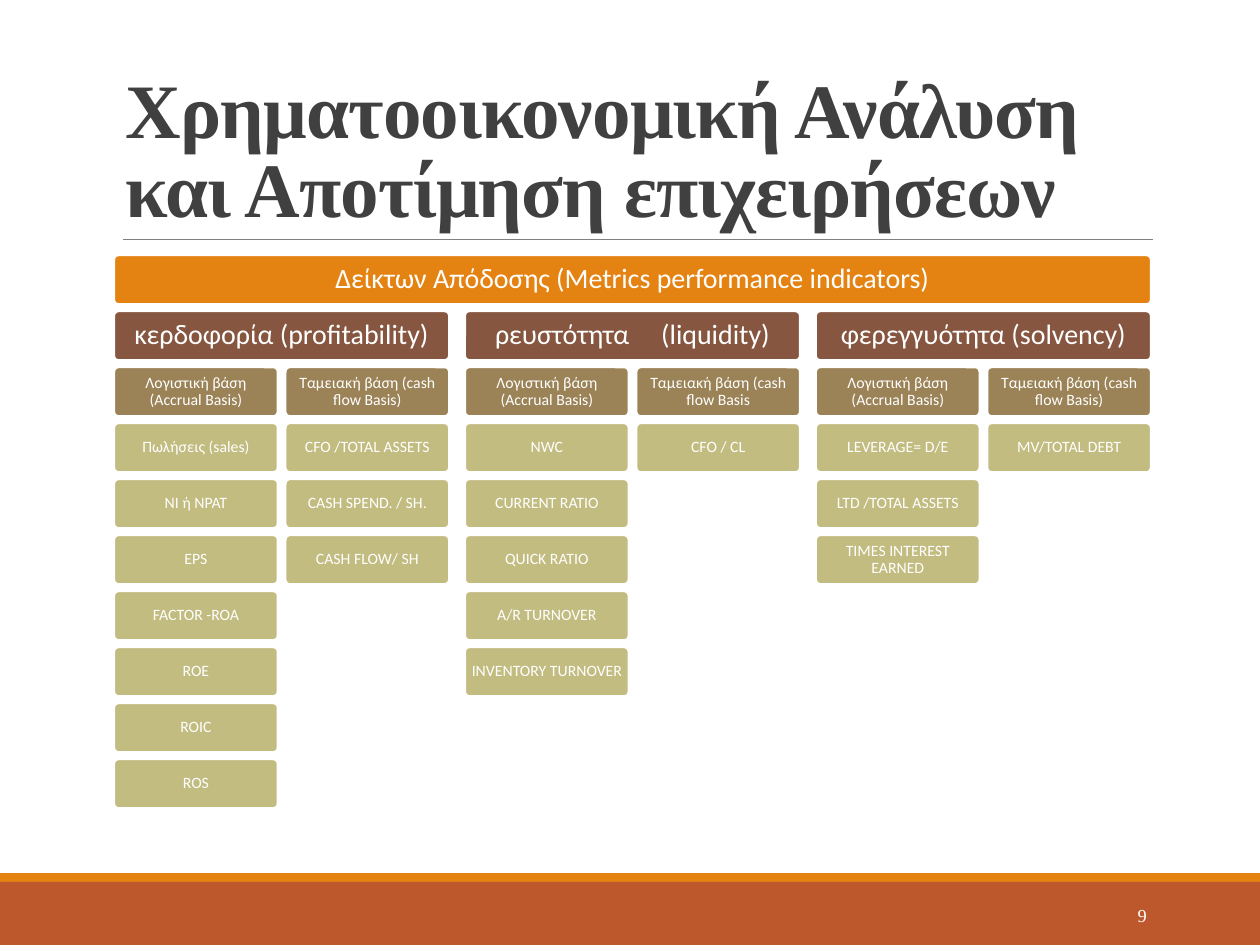
from lxml import etree
from pptx import Presentation
from pptx.dml.color import RGBColor
from pptx.enum.shapes import MSO_CONNECTOR, MSO_SHAPE
from pptx.enum.text import MSO_ANCHOR as Anchor, PP_ALIGN as Align
from pptx.oxml.ns import qn
from pptx.util import Inches, Pt

WHITE = RGBColor(0xFF, 0xFF, 0xFF)
DARK = RGBColor(0x40, 0x40, 0x40)
GRAY = RGBColor(0x80, 0x80, 0x80)
ORANGE = RGBColor(0xE4, 0x83, 0x12)
RUST = RGBColor(0xBD, 0x58, 0x2C)
BROWN = RGBColor(0x86, 0x56, 0x40)
TAN = RGBColor(0x9B, 0x83, 0x57)
SAND = RGBColor(0xC2, 0xBC, 0x80)

SERIF, SANS = "Times New Roman", "Calibri"

# Grid of the metrics tree, in inches
LEFT, TOP = 0.9, 2.02
TREE_W, CATEGORY_W, BASIS_W, BOX_H = 8.24, 2.67, 1.31, 0.4
CATEGORY_STEP = (TREE_W - CATEGORY_W) / 2
BASIS_STEP = CATEGORY_W - BASIS_W
ROW_STEP = 4 / 9

HEADLINE = "Δείκτων Απόδοσης (Metrics performance indicators)"
ACCRUAL = "Λογιστική βάση (Accrual Basis)"
CASH = "Ταμειακή βάση (cash flow Basis)"

# Category, width added to its word gap in points, metrics by basis
CATEGORIES = [
    ("κερδοφορία (profitability)", 0, [
        (ACCRUAL, ["Πωλήσεις (sales)", "NI ή NPAT", "EPS", "FACTOR -ROA",
                   "ROE", "ROIC", "ROS"]),
        (CASH, ["CFO /TOTAL ASSETS", "CASH SPEND. / SH.", "CASH FLOW/ SH"]),
    ]),
    ("ρευστότητα (liquidity)", 14.5, [
        (ACCRUAL, ["NWC", "CURRENT RATIO", "QUICK RATIO", "A/R TURNOVER",
                   "INVENTORY TURNOVER"]),
        ("Ταμειακή βάση (cash flow Basis", ["CFO / CL"]),
    ]),
    ("φερεγγυότητα (solvency)", 0, [
        (ACCRUAL, ["LEVERAGE= D/E", "LTD /TOTAL ASSETS",
                   "TIMES INTEREST EARNED"]),
        (CASH, ["MV/TOTAL DEBT"]),
    ]),
]


def write_text(shape, text, *, size, font=SANS, color=WHITE, bold=False,
               align=Align.CENTER, anchor=Anchor.MIDDLE, line_spacing=0.9,
               inset=None, tracking=0, word_gap=0):
    frame = shape.text_frame
    frame.word_wrap = True
    frame.vertical_anchor = anchor
    if inset is not None:
        frame.margin_left = frame.margin_right = Inches(inset)
        frame.margin_top = frame.margin_bottom = Inches(inset)
    paragraph = frame.paragraphs[0]
    paragraph.alignment = align
    paragraph.line_spacing = line_spacing
    # A widened word gap needs its own run
    parts = text.partition(" ") if word_gap else [text]
    for part in parts:
        run = paragraph.add_run()
        run.text = part
        run.font.name = font
        run.font.size = Pt(size)
        run.font.bold = bold
        run.font.color.rgb = color
        spacing = word_gap if part == " " else tracking
        if spacing:
            run.font._element.set("spc", str(int(spacing * 100)))


def add_label(slide, left, top, width, height, text, **text_format):
    label = slide.shapes.add_textbox(Inches(left), Inches(top),
                                     Inches(width), Inches(height))
    write_text(label, text, **text_format)


def add_block(slide, kind, left, top, width, height, fill):
    block = slide.shapes.add_shape(kind, Inches(left), Inches(top),
                                   Inches(width), Inches(height))
    block.shadow.inherit = False
    block.fill.solid()
    block.fill.fore_color.rgb = fill
    block.line.fill.background()
    return block


def add_tree_box(slide, left, row, width, fill, text, **text_format):
    box = add_block(slide, MSO_SHAPE.ROUNDED_RECTANGLE, left,
                    TOP + row * ROW_STEP, width, BOX_H, fill)
    box.adjustments[0] = 0.1
    box.line.color.rgb = WHITE
    box.line.width = Pt(2)
    write_text(box, text, **text_format)


def add_rule(slide, left, right, top):
    rule = slide.shapes.add_connector(MSO_CONNECTOR.STRAIGHT, Inches(left),
                                      Inches(top), Inches(right), Inches(top))
    rule.line.color.rgb = GRAY
    rule.line.width = Pt(0.5)
    etree.SubElement(rule._element.spPr, qn("a:effectLst"))


def add_metrics_tree(slide):
    heading = dict(size=16, inset=0.07)
    detail = dict(size=9, inset=0.04)
    add_tree_box(slide, LEFT, 0, TREE_W, ORANGE, HEADLINE, **heading)
    for i, (category, gap, bases) in enumerate(CATEGORIES):
        category_left = LEFT + i * CATEGORY_STEP
        add_tree_box(slide, category_left, 1, CATEGORY_W, BROWN, category,
                     word_gap=gap, **heading)
        for j, (basis, metrics) in enumerate(bases):
            left = category_left + j * BASIS_STEP
            add_tree_box(slide, left, 2, BASIS_W, TAN, basis, **detail)
            for row, metric in enumerate(metrics, start=3):
                add_tree_box(slide, left, row, BASIS_W, SAND, metric, **detail)


def main():
    deck = Presentation()
    deck.slide_width, deck.slide_height = Inches(10), Inches(7.5)
    slide = deck.slides.add_slide(deck.slide_layouts[6])

    # Title and rule
    add_rule(slide, 0.98, 9.15, 1.9)
    add_label(slide, 0.9, 0.31, 8.25, 1.59,
              "Χρηματοοικονομική Ανάλυση και Αποτίμηση επιχειρήσεων",
              size=44, font=SERIF, color=DARK, bold=True, align=Align.LEFT,
              anchor=Anchor.BOTTOM, line_spacing=0.85, tracking=-0.5)

    # Footer bands and page number
    add_block(slide, MSO_SHAPE.RECTANGLE, 0, 6.93, 10, 0.07, ORANGE)
    add_block(slide, MSO_SHAPE.RECTANGLE, 0, 7, 10, 0.5, RUST)
    add_label(slide, 8.12, 7.06, 1.08, 0.4, "9", size=10.5, font=SERIF,
              align=Align.RIGHT, line_spacing=1.0)

    add_metrics_tree(slide)
    deck.save("out.pptx")


if __name__ == "__main__":
    main()
